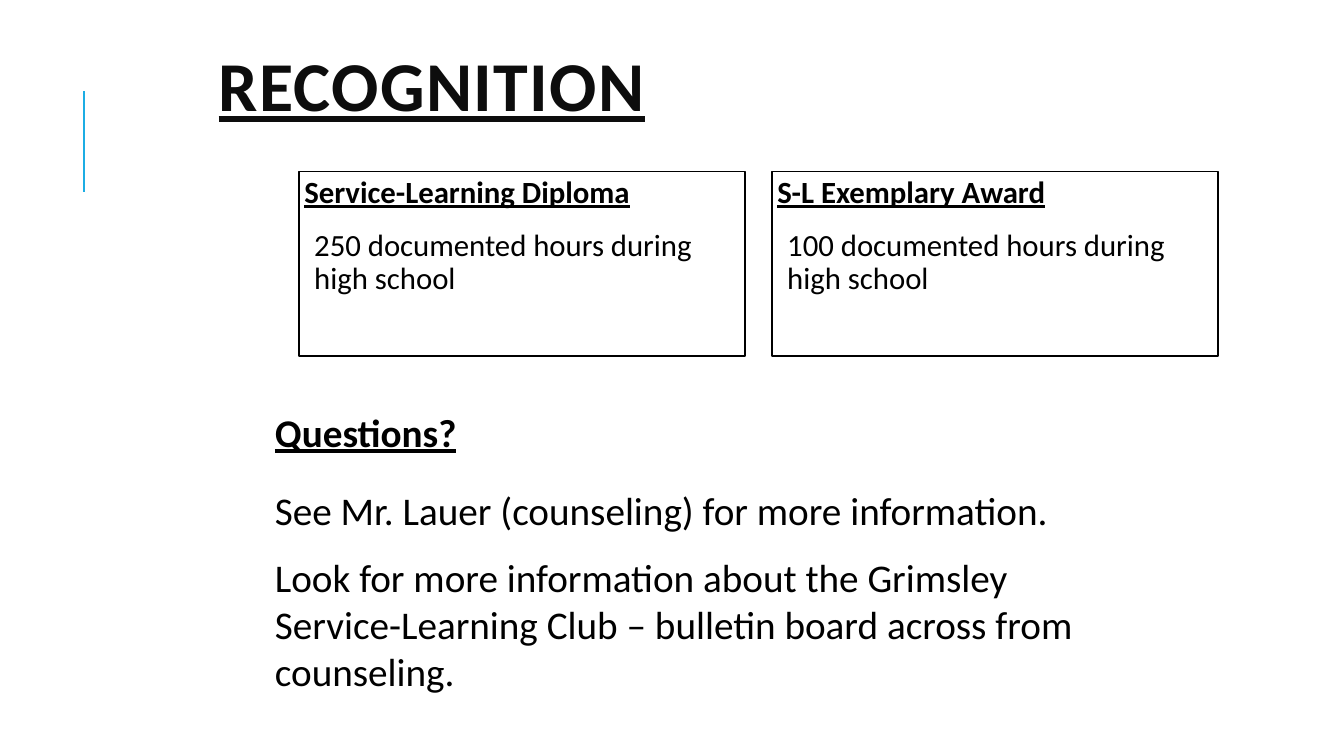
import pptx
import pptx.dml.color
import pptx.enum.shapes
import pptx.enum.text
import pptx.oxml
import pptx.oxml.ns
import pptx.util

Cm, Pt = pptx.util.Cm, pptx.util.Pt
RGBColor = pptx.dml.color.RGBColor
ANCHOR = pptx.enum.text.MSO_ANCHOR

TITLE = "RECOGNITION"
AWARDS = [
    ("Service-Learning Diploma", "250 documented hours during high school"),
    ("S-L Exemplary Award", "100 documented hours during high school"),
]
# text, space before in points, is heading
QUESTIONS = [
    ("Questions?", 0, True),
    ("See Mr. Lauer (counseling) for more information.", 22, False),
    ("Look for more information about the Grimsley Service-Learning Club"
     " – bulletin board across from counseling.", 14.6, False),
]

FONT = "Calibri"
BLACK = RGBColor(0x00, 0x00, 0x00)
NEAR_BLACK = RGBColor(0x0D, 0x0D, 0x0D)
WHITE = RGBColor(0xFF, 0xFF, 0xFF)
ACCENT = RGBColor(0x1C, 0xAD, 0xE4)

CARD_LEFT, CARD_TOP, CARD_WIDTH, CARD_HEIGHT, CARD_GAP = 7.54, 4.32, 11.23, 4.65, 0.69
CARD_INSET, CARD_INDENT = 0.13, 0.25


def write(frame, text, *, size, heading=False, color=BLACK, line=1.0,
          before=0, after=0, indent=0, tracking=0):
    """Fill the frame's empty first paragraph, or append a new one."""
    paragraph = frame.paragraphs[0]
    if paragraph.runs:
        paragraph = frame.add_paragraph()
    paragraph.alignment = pptx.enum.text.PP_ALIGN.LEFT
    paragraph.line_spacing = line
    paragraph.space_before, paragraph.space_after = Pt(before), Pt(after)
    if indent:
        paragraph._p.get_or_add_pPr().set("marL", str(Cm(indent)))
    run = paragraph.add_run()
    run.text = text
    run.font.name, run.font.size = FONT, Pt(size)
    run.font.bold = run.font.underline = heading
    run.font.color.rgb = color
    if tracking:
        run._r.get_or_add_rPr().set("spc", str(tracking * 100))


def add_text_area(slide, left, top, width, height, anchor=ANCHOR.TOP):
    frame = slide.shapes.add_textbox(Cm(left), Cm(top), Cm(width), Cm(height)).text_frame
    frame.word_wrap = True
    frame.vertical_anchor = anchor
    return frame


def add_award(slide, index, award, requirement):
    left = CARD_LEFT + index * (CARD_WIDTH + CARD_GAP)
    card = slide.shapes.add_shape(
        pptx.enum.shapes.MSO_SHAPE.RECTANGLE,
        Cm(left), Cm(CARD_TOP), Cm(CARD_WIDTH), Cm(CARD_HEIGHT))
    card.shadow.inherit = False
    card.fill.solid()
    card.fill.fore_color.rgb = WHITE
    card.line.color.rgb = BLACK
    card.line.width = Pt(1.25)
    frame = card.text_frame
    frame.word_wrap = True
    frame.vertical_anchor = ANCHOR.TOP
    frame.margin_left = frame.margin_right = Cm(CARD_INSET)
    frame.margin_top = frame.margin_bottom = Cm(CARD_INSET)
    write(frame, award, size=22, heading=True, line=0.9, after=2)
    write(frame, requirement, size=22, line=0.9, before=12, after=2, indent=CARD_INDENT)


def main():
    deck = pptx.Presentation()
    deck.slide_width, deck.slide_height = Cm(33.87), Cm(19.05)
    slide = deck.slides.add_slide(deck.slide_layouts[6])

    accent = slide.shapes.add_connector(
        pptx.enum.shapes.MSO_CONNECTOR.STRAIGHT, Cm(2.12), Cm(4.83), Cm(2.12), Cm(2.29))
    accent.line.color.rgb = ACCENT
    accent.line.width = Pt(1.5)
    accent._element.spPr.append(pptx.oxml.parse_xml(
        "<a:effectLst %s/>" % pptx.oxml.ns.nsdecls("a")))

    title = add_text_area(slide, 5.26, 0.23, 27, 4.17, ANCHOR.MIDDLE)
    write(title, TITLE, size=50, heading=True, color=NEAR_BLACK, line=0.8, tracking=1)

    for index, (award, requirement) in enumerate(AWARDS):
        add_award(slide, index, award, requirement)

    questions = add_text_area(slide, 6.68, 10.16, 21.79, 7.52)
    for text, before, heading in QUESTIONS:
        write(questions, text, size=28, heading=heading, before=before)

    deck.save("out.pptx")


if __name__ == "__main__":
    main()
